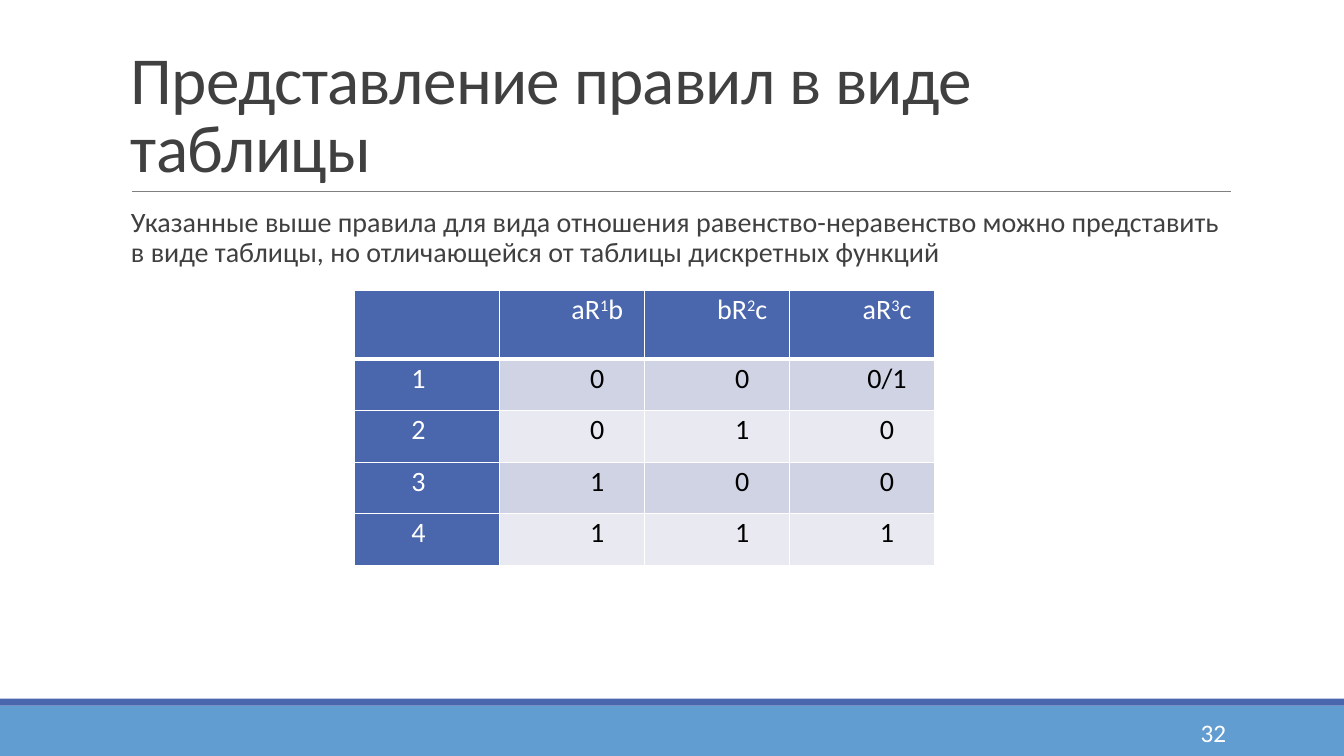
from lxml import etree
from pptx import Presentation
from pptx.dml.color import RGBColor
from pptx.enum.shapes import MSO_CONNECTOR as CONN, MSO_SHAPE as SHAPE
from pptx.enum.text import MSO_ANCHOR as ANCHOR, PP_ALIGN as ALIGN
from pptx.oxml import parse_xml
from pptx.oxml.ns import nsdecls, qn
from pptx.util import Pt

# Content
TITLE = "Представление правил в виде таблицы"
BODY = ("Указанные выше правила для вида отношения равенство-неравенство можно "
        "представить в виде таблицы, но отличающейся от таблицы дискретных функций")
PAGE = "32"
HEADER = [(), ("аR", "1", "b"), ("bR", "2", "c"), ("аR", "3", "с")]
ROWS = [("1", "0", "0", "0/1"),
        ("2", "0", "1", "0"),
        ("3", "1", "0", "0"),
        ("4", "1", "1", "1")]

# Format
FONT = "Calibri"
WHITE = RGBColor(0xFF, 0xFF, 0xFF)
BLACK = RGBColor(0, 0, 0)
DARK = RGBColor(0x40, 0x40, 0x40)
GRAY = RGBColor(0x80, 0x80, 0x80)
BLUE = RGBColor(0x4A, 0x66, 0xAC)
SKY = RGBColor(0x62, 0x9D, 0xD1)
BANDS = [RGBColor(0xD0, 0xD3, 0xE3), RGBColor(0xE9, 0xEA, 0xF1)]
TABLE_AT = (253.4, 207.4)
COL_W, HEAD_H, ROW_H = 103.5, 49, 36.9

prs = Presentation()
prs.slide_width, prs.slide_height = Pt(960), Pt(540)
s = prs.slides.add_slide(prs.slide_layouts[6])


def set_all(obj, values):
    for name, value in values.items():
        setattr(obj, name, value)


def add_run(p, text, size, color):
    r = p.add_run()
    r.text = text
    set_all(r.font, {"name": FONT, "size": Pt(size)})
    r.font.color.rgb = color
    return r


def add_text(box, text, size, color, frame, para):
    tf = s.shapes.add_textbox(*map(Pt, box)).text_frame
    set_all(tf, {"word_wrap": True, **frame})
    p = tf.paragraphs[0]
    set_all(p, para)
    return p, add_run(p, text, size, color)


def set_borders(cell, bottom):
    tc_pr = cell._tc.get_or_add_tcPr()
    for side, width in (("L", 1), ("R", 1), ("T", 1), ("B", bottom)):
        tc_pr.append(parse_xml(
            f'<a:ln{side} {nsdecls("a")} w="{Pt(width)}"><a:solidFill>'
            f'<a:srgbClr val="{WHITE}"/></a:solidFill></a:ln{side}>'))


# Footer bands
for top, height, color in ((504, 36, SKY), (499, 5, BLUE)):
    band = s.shapes.add_shape(SHAPE.RECTANGLE, 0, Pt(top), Pt(960), Pt(height))
    band.shadow.inherit = False
    band.fill.solid()
    band.fill.fore_color.rgb = color
    band.line.fill.background()

# Rule under the title
rule = s.shapes.add_connector(CONN.STRAIGHT, Pt(94.3), Pt(136.8), Pt(879), Pt(136.8))
rule.line.color.rgb = GRAY
rule.line.width = Pt(0.5)
etree.SubElement(rule._element.spPr, qn("a:effectLst"))

# Title, body and page number
_, r = add_text((86.4, 22.6, 792, 114.2), TITLE, 48, DARK,
                {"vertical_anchor": ANCHOR.BOTTOM}, {"line_spacing": 0.85})
r.font._element.set("spc", "-50")
p, _ = add_text((86.4, 145.4, 792, 316.8), BODY, 20, DARK,
                {"margin_left": 0, "margin_right": 0},
                {"line_spacing": 0.9, "space_before": Pt(12), "space_after": Pt(2)})
p._p.get_or_add_pPr().set("marL", str(Pt(7.2)))
add_text((780, 508.5, 103, 28.8), PAGE, 18, WHITE,
         {"vertical_anchor": ANCHOR.MIDDLE}, {"alignment": ALIGN.RIGHT})

# Table of rules
grid = [HEADER] + [[(value,) for value in row] for row in ROWS]
n_rows, n_cols = len(grid), len(HEADER)
table = s.shapes.add_table(n_rows, n_cols, *map(Pt, TABLE_AT), Pt(COL_W * n_cols),
                           Pt(HEAD_H + ROW_H * len(ROWS))).table
for col in table.columns:
    col.width = Pt(COL_W)
for i, row in enumerate(grid):
    table.rows[i].height = Pt(ROW_H if i else HEAD_H)
    for j, parts in enumerate(row):
        cell = table.cell(i, j)
        is_head = i == 0 or j == 0
        set_borders(cell, 1 if i else 3)
        cell.fill.solid()
        cell.fill.fore_color.rgb = BLUE if is_head else BANDS[(i - 1) % 2]
        set_all(cell, {"margin_left": Pt(4.5), "margin_right": Pt(4.5),
                       "margin_top": 0, "margin_bottom": 0})
        p = cell.text_frame.paragraphs[0]
        set_all(p, {"alignment": ALIGN.CENTER if j else ALIGN.LEFT, "line_spacing": 1.07,
                    "space_after": Pt(8 if j == n_cols - 1 else 0)})
        p._p.get_or_add_pPr().set("marL", str(Pt(36)))
        for k, part in enumerate(parts):
            r = add_run(p, part, 20, WHITE if is_head else BLACK)
            if k == 1:
                r.font._element.set("baseline", "30000")

prs.save("out.pptx")
